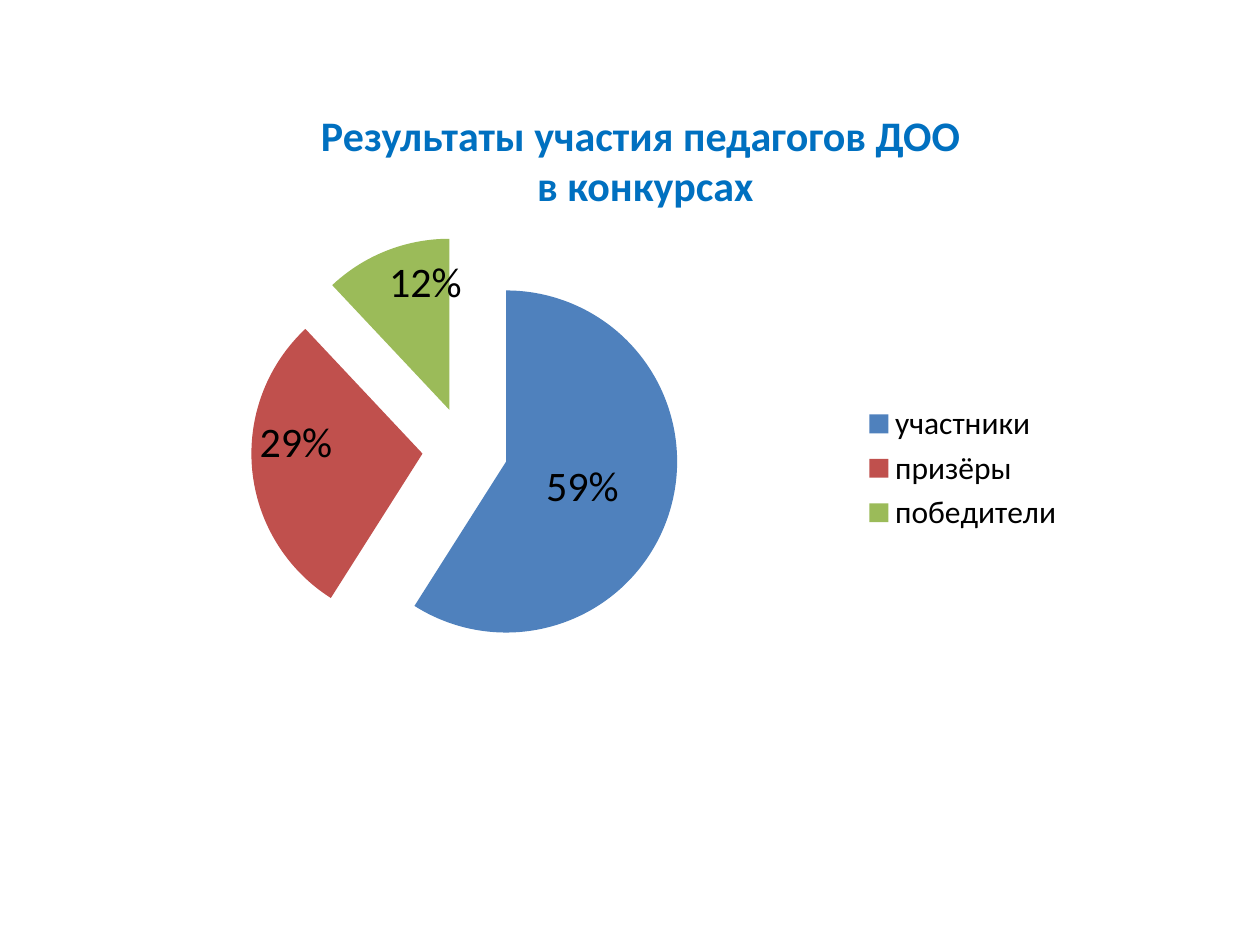
from dataclasses import dataclass

from pptx import Presentation
from pptx.chart.chart import Chart
from pptx.chart.data import CategoryChartData
from pptx.dml.color import RGBColor
from pptx.enum.chart import XL_CHART_TYPE, XL_LABEL_POSITION, XL_LEGEND_POSITION
from pptx.enum.text import MSO_AUTO_SIZE, PP_ALIGN
from pptx.oxml import parse_xml
from pptx.oxml.ns import nsdecls
from pptx.slide import Slide
from pptx.text.text import Font
from pptx.util import Pt


@dataclass(frozen=True)
class Slice:
    name: str
    share: float
    color: str


FONT = "Calibri"
TITLE = ["Результаты участия педагогов ДОО", " в конкурсах"]
SLICES = [
    Slice("участники", 0.59, "4F81BD"),
    Slice("призёры", 0.29, "C0504D"),
    Slice("победители", 0.12, "9BBB59"),
]


def rgb(value: str) -> RGBColor:
    return RGBColor.from_string(value)


def style(font: Font, size: float, color: str, bold: bool = False) -> None:
    font.name, font.size, font.bold = FONT, Pt(size), bold
    font.color.rgb = rgb(color)


def manual_layout(content: str):
    return parse_xml(
        f"<c:layout {nsdecls('c')}><c:manualLayout>{content}</c:manualLayout></c:layout>"
    )


def add_title(s: Slide) -> None:
    tf = s.shapes.add_textbox(Pt(174), Pt(59), Pt(384), Pt(65.4)).text_frame
    tf.word_wrap = False
    tf.auto_size = MSO_AUTO_SIZE.SHAPE_TO_FIT_TEXT
    tf.text = "\n".join(TITLE)
    for p in tf.paragraphs:
        p.alignment = PP_ALIGN.CENTER
        for r in p.runs:
            style(r.font, 24, "0070C0", bold=True)


def place_plot(chart: Chart) -> None:
    area = chart.element.chart.plotArea if hasattr(chart, "element") else chart._chartSpace.chart.plotArea
    for old in area.xpath("c:layout"):
        area.remove(old)
    area.insert(0, manual_layout(
        '<c:layoutTarget val="inner"/><c:xMode val="edge"/><c:yMode val="edge"/>'
        '<c:x val="0.047"/><c:y val="0.089"/><c:w val="0.536"/><c:h val="0.756"/>'
    ))


def add_pie(s: Slide) -> None:
    data = CategoryChartData(number_format="0%")
    data.categories = [item.name for item in SLICES]
    data.add_series("Series 1", [item.share for item in SLICES])
    chart = s.shapes.add_chart(
        XL_CHART_TYPE.PIE, Pt(105), Pt(106), Pt(510.5), Pt(323.3), data
    ).chart
    chart.has_title = False
    style(chart.font, 18, "000000")
    chart.has_legend = True
    chart.legend.position = XL_LEGEND_POSITION.RIGHT
    chart.legend.include_in_layout = False
    place_plot(chart)

    series = chart.plots[0].series[0]
    for i, item in enumerate(SLICES):
        fill = series.points[i].format.fill
        fill.solid()
        fill.fore_color.rgb = rgb(item.color)
    ser = series._element
    ser.xpath("c:tx")[0].addnext(parse_xml(f'<c:explosion {nsdecls("c")} val="25"/>'))

    labels = series.data_labels
    labels.show_value = True
    labels.number_format, labels.number_format_is_linked = "0%", False
    labels.position = XL_LABEL_POSITION.INSIDE_END
    style(labels.font, 24, "000000")
    label = series.points[0].data_label
    label.position = XL_LABEL_POSITION.INSIDE_END
    style(label.font, 24, "000000")
    ser.xpath("c:dLbls/c:dLbl/c:idx")[0].addnext(
        manual_layout('<c:x val="-0.05"/><c:y val="0.01"/>')
    )


def main() -> None:
    """Build a slide with a titled pie chart of contest results."""
    prs = Presentation()
    prs.slide_width, prs.slide_height = Pt(720), Pt(540)
    s = prs.slides.add_slide(prs.slide_layouts[6])
    add_pie(s)
    add_title(s)
    prs.save("out.pptx")


if __name__ == "__main__":
    main()
